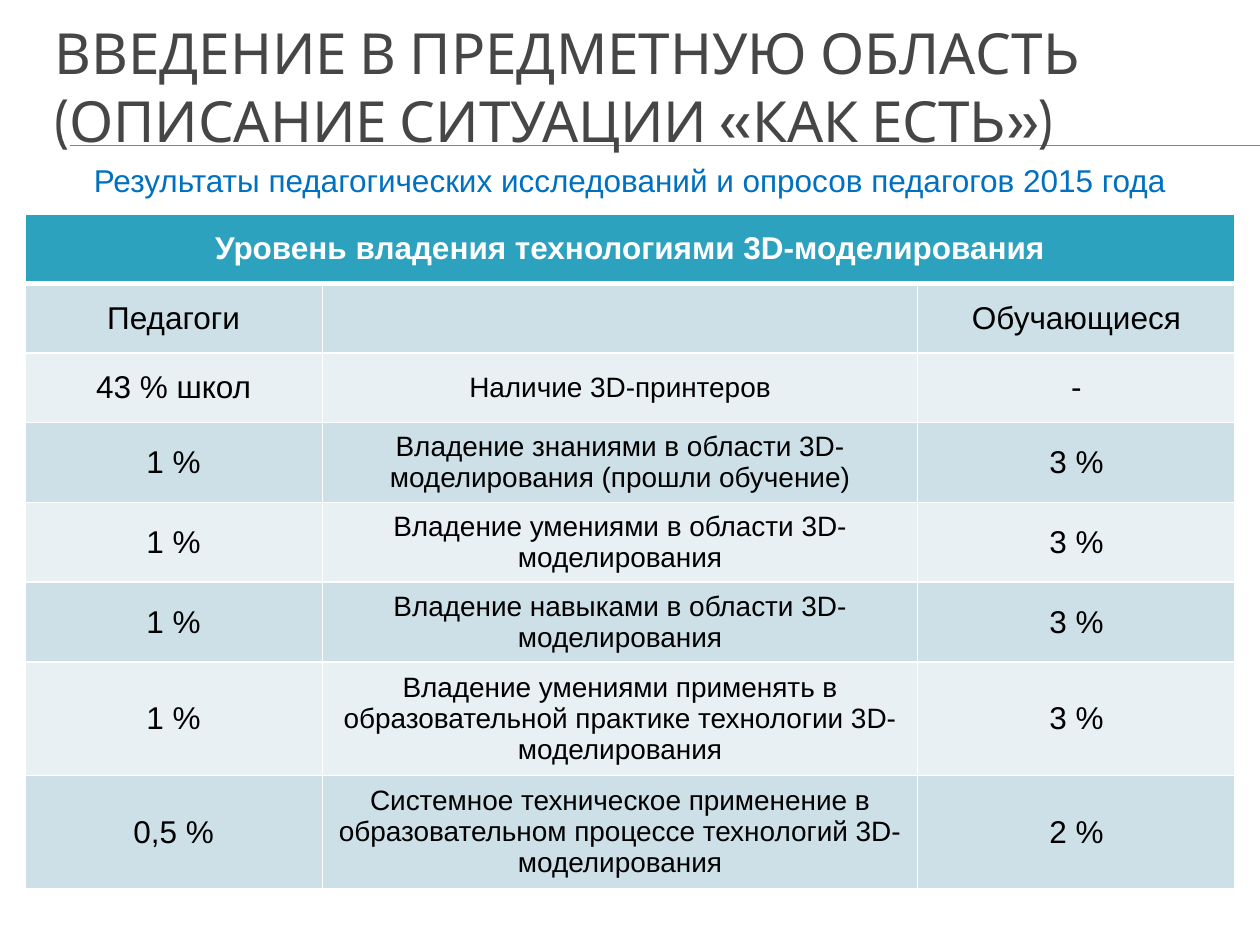
from lxml.etree import SubElement
from pptx import Presentation
from pptx.dml.color import RGBColor
from pptx.enum.shapes import MSO_CONNECTOR
from pptx.enum.text import MSO_ANCHOR, MSO_AUTO_SIZE, PP_ALIGN
from pptx.oxml.ns import qn
from pptx.util import Cm, Pt

TITLE = "ВВЕДЕНИЕ В ПРЕДМЕТНУЮ ОБЛАСТЬ\v(ОПИСАНИЕ СИТУАЦИИ «КАК ЕСТЬ»)"
SUBTITLE = "Результаты педагогических исследований и опросов педагогов 2015 года"
TABLE_HEADER = "Уровень владения технологиями 3D-моделирования"
# teachers, indicator, students, row height in cm
ROWS = [
    ("Педагоги", "", "Обучающиеся", 1.4),
    ("43 % школ", "Наличие 3D-принтеров", "-", 1.4),
    ("1 %", "Владение знаниями в области 3D-моделирования (прошли обучение)", "3 %", 1.61),
    ("1 %", "Владение умениями в области 3D-моделирования", "3 %", 1.61),
    ("1 %", "Владение навыками в области 3D-моделирования", "3 %", 1.61),
    ("1 %", "Владение умениями применять в образовательной практике "
            "технологии 3D-моделирования", "3 %", 2.28),
    ("0,5 %", "Системное техническое применение в образовательном процессе "
              "технологий 3D-моделирования", "2 %", 2.28),
]
HEADER_HEIGHT = 1.4
COL_WIDTHS = (6.0, 12.0, 6.4)
LEFT, TABLE_TOP = 0.5, 4.32
RULE_LEFT, RULE_TOPS = 1.42, (2.93, 2.94)

THEME = {
    "accent": "2DA2BF",
    "bands": ("CDE0E8", "E8F0F4"),
    "border": "FFFFFF",
    "title": {"name": "Cabin", "size": Pt(32.4), "color": "464646", "bold": False},
    "subtitle": {"name": "Arial", "size": Pt(18), "color": "0070C0"},
    "header": {"name": "Arial", "size": Pt(18), "color": "FFFFFF", "bold": True},
    "value": {"name": "Arial", "size": Pt(18), "color": "000000", "bold": False},
    "indicator": {"name": "Arial", "size": Pt(16), "color": "000000", "bold": False},
}


def write(tf, text, style, align=PP_ALIGN.CENTER):
    tf.text = text
    p = tf.paragraphs[0]
    p.alignment = align
    for r in p.runs:
        for key, value in THEME[style].items():
            if key == "color":
                r.font.color.rgb = RGBColor.from_string(value)
            else:
                setattr(r.font, key, value)
    return p


def set_borders(cell, widths):
    """Draw the left, right, top and bottom borders, widths in points."""
    tc_pr = cell._tc.get_or_add_tcPr()
    for i, (side, width) in enumerate(zip(("lnL", "lnR", "lnT", "lnB"), widths)):
        ln = tc_pr.makeelement(qn(f"a:{side}"), {"w": str(Pt(width))})
        fill = SubElement(ln, qn("a:solidFill"))
        SubElement(fill, qn("a:srgbClr"), val=THEME["border"])
        tc_pr.insert(i, ln)


def format_cell(cell, text, style, fill, widths):
    cell.vertical_anchor = MSO_ANCHOR.MIDDLE
    cell.fill.solid()
    cell.fill.fore_color.rgb = RGBColor.from_string(fill)
    set_borders(cell, widths)
    write(cell.text_frame, text, style)


def add_title(s):
    """Set the title so that its second line stands on the rules."""
    title = s.shapes.title
    title.left, title.top, title.width, title.height = Cm(0.84), Cm(1.27), Cm(24.13), Cm(2.34)
    tf = title.text_frame
    for key, value in {"word_wrap": True, "auto_size": MSO_AUTO_SIZE.NONE,
                       "vertical_anchor": MSO_ANCHOR.BOTTOM, "margin_bottom": Cm(0.5)}.items():
        setattr(tf, key, value)
    write(tf, TITLE, "title", PP_ALIGN.LEFT).line_spacing = 1.0


def add_rules(s, right):
    """Place the two thin rules behind the title."""
    for top in RULE_TOPS:
        rule = s.shapes.add_connector(MSO_CONNECTOR.STRAIGHT, Cm(RULE_LEFT), Cm(top), right, Cm(top))
        rule.line.color.rgb = RGBColor.from_string(THEME["accent"])
        rule.line.width = Pt(0.75)
        SubElement(rule.element.spPr, qn("a:effectLst"))
        s.shapes.title.element.addprevious(rule.element)


def add_subtitle(s):
    tf = s.shapes.add_textbox(Cm(LEFT), Cm(3.12), Cm(sum(COL_WIDTHS)), Cm(1.02)).text_frame
    tf.word_wrap = True
    tf.auto_size = MSO_AUTO_SIZE.SHAPE_TO_FIT_TEXT
    write(tf, SUBTITLE, "subtitle")


def add_results_table(s):
    heights = [HEADER_HEIGHT] + [row[-1] for row in ROWS]
    table = s.shapes.add_table(len(heights), len(COL_WIDTHS), Cm(LEFT), Cm(TABLE_TOP),
                               Cm(sum(COL_WIDTHS)), Cm(sum(heights))).table
    for col, width in zip(table.columns, COL_WIDTHS):
        col.width = Cm(width)
    for row, height in zip(table.rows, heights):
        row.height = Cm(height)

    table.cell(0, 0).merge(table.cell(0, len(COL_WIDTHS) - 1))
    for c in range(len(COL_WIDTHS)):
        format_cell(table.cell(0, c), "" if c else TABLE_HEADER, "header",
                    THEME["accent"], (1, 1, 1, 3))
    for i, (*texts, _) in enumerate(ROWS):
        for c, text in enumerate(texts):
            format_cell(table.cell(i + 1, c), text, "indicator" if c == 1 else "value",
                        THEME["bands"][i % 2], (1, 1, 1 if i else 3, 1))


def main():
    prs = Presentation()
    prs.slide_width, prs.slide_height = Cm(25.4), Cm(19.05)
    s = prs.slides.add_slide(prs.slide_layouts[5])
    add_title(s)
    add_rules(s, prs.slide_width)
    add_subtitle(s)
    add_results_table(s)
    prs.save("out.pptx")


if __name__ == "__main__":
    main()
